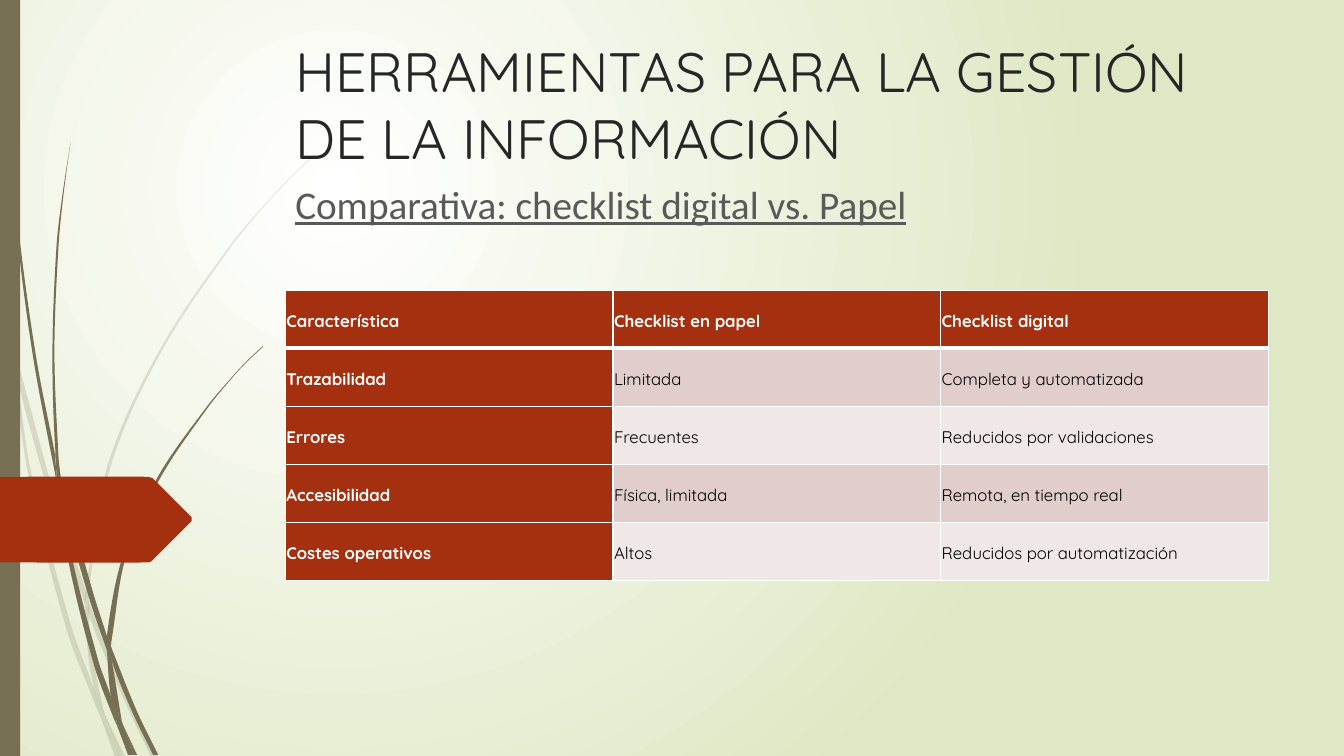
from math import hypot

from lxml import etree
from pptx import Presentation
from pptx.dml.color import RGBColor
from pptx.enum.shapes import MSO_SHAPE
from pptx.enum.text import MSO_ANCHOR, PP_ALIGN
from pptx.oxml.ns import qn
from pptx.util import Inches, Pt

RECTANGLE = MSO_SHAPE.RECTANGLE
LEFT = PP_ALIGN.LEFT
TOP, MIDDLE, BOTTOM = MSO_ANCHOR.TOP, MSO_ANCHOR.MIDDLE, MSO_ANCHOR.BOTTOM

COLORS = {name: RGBColor.from_string(value) for name, value in {
    "white": "FFFFFF", "lime": "DFE8C4", "olive": "766F54", "rust": "A53010",
    "title": "262626", "subtitle": "595959", "black": "000000",
    "band_dark": "E1CDCC", "band_light": "F0E8E7",
}.items()}

# Content column shared by the title, subtitle and table
CONTENT_LEFT, CONTENT_WIDTH = 2.83, 9.75
TITLE_TOP, TITLE_HEIGHT = 0.25, 1.49
TABLE_TOP, TABLE_HEIGHT = 2.88, 2.88

# Outline corners of the grass pieces, in inches
FAINT_GRASS = [
    [(0.11, 3.5), (0.09, 3.22), (0, 2.82), (0, 2.99), (0.1, 3.44)],
    [(0.58, 5.22), (0.84, 5.99), (0.85, 5.86), (0.62, 5.2), (0.14, 3.45), (0.17, 3.76)],
    [(0.92, 6.07), (0.88, 5.96), (0.88, 6.1), (1.23, 6.94), (1.5, 7.51), (1.55, 7.51),
     (1.27, 6.92)],
    [(1.19, 7.51), (1.24, 7.51), (1.05, 7.11)],
    [(0.93, 6.83), (0.7, 6.19), (0.31, 4.69), (0.17, 3.76), (0.11, 3.5), (0.28, 4.7),
     (0.65, 6.21), (0.92, 6.93), (1.01, 7.14), (0.99, 7.07)],
    [(0.84, 5.99), (0.87, 6.46), (0.93, 6.83), (0.96, 6.92), (1.05, 7.11), (1.03, 7.06),
     (0.91, 6.46), (0.88, 6.1), (0.88, 6.08)],
    [(0.88, 5.84), (1.1, 4.62), (1.6, 3.49), (2.29, 2.45), (2.68, 1.98), (2.9, 1.75),
     (3.12, 1.54), (3.12, 1.53), (2.89, 1.75), (2.68, 1.97), (2.28, 2.44), (1.58, 3.48),
     (1.07, 4.61), (0.85, 5.84), (0.85, 5.86), (0.88, 5.96)],
    [(1.01, 7.14), (1.14, 7.51), (1.19, 7.51)],
    [(0.88, 6.08), (0.88, 6.1), (0.88, 5.96), (0.85, 5.86), (0.84, 5.99)],
    [(0.96, 6.92), (0.93, 6.83), (0.99, 7.07), (1.01, 7.14), (1.19, 7.51), (1.05, 7.11)],
]
SOLID_GRASS = [
    [(0.07, 1.1), (0.17, 2.33), (0.33, 3.55), (0.56, 4.77), (0.57, 4.81), (0.55, 4.57),
     (0.55, 4.53), (0.36, 3.55), (0.19, 2.32), (0.08, 1.09), (0.05, 0.48), (0.04, 0),
     (0.03, 0), (0.04, 0.48)],
    [(0.88, 5.92), (1.06, 6.45), (1.06, 6.33), (1.06, 6.31), (0.93, 5.9), (0.6, 4.72),
     (0.64, 5.05)],
    [(1.13, 6.49), (1.1, 6.41), (1.11, 6.56), (1.32, 7.08), (1.52, 7.49), (1.57, 7.49),
     (1.36, 7.06)],
    [(1.1, 6.91), (0.98, 6.57), (0.72, 5.56), (0.64, 5.05), (0.57, 4.77), (0.68, 5.57),
     (0.93, 6.59), (1.11, 7.08), (1.17, 7.22), (1.16, 7.17)],
    [(0.6, 4.72), (0.58, 4.53), (0.54, 3.49), (0.58, 2.45), (0.63, 1.93), (0.7, 1.41),
     (0.62, 1.93), (0.56, 2.45), (0.52, 3.49), (0.55, 4.49)],
    [(1.33, 7.49), (1.36, 7.49), (1.22, 7.19)],
    [(0.57, 4.77), (0.64, 5.05), (0.6, 4.72), (0.55, 4.49), (0.55, 4.53)],
    [(1.11, 6.33), (1.25, 5.52), (1.58, 4.76), (2.05, 4.06), (2.31, 3.74), (2.45, 3.59),
     (2.61, 3.44), (2.6, 3.44), (2.45, 3.58), (2.31, 3.73), (2.04, 4.05), (1.56, 4.74),
     (1.22, 5.51), (1.06, 6.31), (1.1, 6.41)],
    [(1.17, 7.22), (1.27, 7.49), (1.31, 7.49)],
    [(1.06, 6.45), (1.1, 6.91), (1.16, 7.06), (1.22, 7.19), (1.21, 7.16), (1.11, 6.56),
     (1.09, 6.51)],
    [(1.06, 6.45), (1.09, 6.51), (1.11, 6.56), (1.1, 6.41), (1.06, 6.31), (1.06, 6.33)],
    [(1.16, 7.06), (1.1, 6.91), (1.16, 7.17), (1.17, 7.22), (1.3, 7.49), (1.33, 7.49),
     (1.22, 7.19)],
]
PAGE_TAG = [(1.47, 5.58), (1.5, 5.57), (1.51, 5.56), (1.9, 5.17), (1.9, 5.13),
            (1.51, 4.74), (1.5, 4.74), (1.47, 4.73), (0, 4.73), (0, 5.58)]
SMOOTH_LIMIT = 0.8  # cosine of the sharpest turn that is still rounded

TABLE_ROWS = [
    ("Característica", "Checklist en papel", "Checklist digital"),
    ("Trazabilidad", "Limitada", "Completa y automatizada"),
    ("Errores", "Frecuentes", "Reducidos por validaciones"),
    ("Accesibilidad", "Física, limitada", "Remota, en tiempo real"),
    ("Costes operativos", "Altos", "Reducidos por automatización"),
]


def paint(shape, color):
    shape.shadow.inherit = False
    shape.fill.solid()
    shape.fill.fore_color.rgb = COLORS[color]
    shape.line.fill.background()


def write(frame, text, color, font_format, paragraph_format):
    frame.word_wrap = True
    paragraph = frame.paragraphs[0]
    for name, value in paragraph_format.items():
        setattr(paragraph, name, value)
    run = paragraph.add_run()
    run.text = text
    for name, value in font_format.items():
        setattr(run.font, name, value)
    run.font.color.rgb = COLORS[color]


presentation = Presentation()
presentation.slide_width, presentation.slide_height = Inches(13.33), Inches(7.5)
slide = presentation.slides.add_slide(presentation.slide_layouts[5])
shapes = slide.shapes

# Radial background, centred in the upper left quarter
background = slide.background.fill
background.gradient()
for stop, color in zip(background.gradient_stops, ("white", "lime")):
    stop.color.rgb = COLORS[color]
linear = next(slide.element.iter(qn("a:lin")))
radial = etree.Element(qn("a:path"), {"path": "circle"})
etree.SubElement(radial, qn("a:fillToRect"),
                 {"l": "50000", "t": "50000", "r": "100000", "b": "100000"})
linear.getparent().replace(linear, radial)

# Grass and side bar, then the page tag
faint_group, solid_group = shapes.add_group_shape(), shapes.add_group_shape()
paint(shapes.add_shape(RECTANGLE, 0, 0, Inches(0.2), presentation.slide_height), "olive")
outlines = [(faint_group.shapes, piece, "olive", 20) for piece in FAINT_GRASS]
outlines += [(solid_group.shapes, piece, "olive", 100) for piece in SOLID_GRASS]
outlines.append((shapes, PAGE_TAG, "rust", 100))
for parent, corners, color, opacity in outlines:
    points = [(Inches(x), Inches(y)) for x, y in corners]
    builder = parent.build_freeform(*points[0])
    builder.add_line_segments(points[1:] + points[:1], close=True)
    shape = builder.convert_to_shape()
    paint(shape, color)
    if opacity < 100:
        fill_color = next(shape.element.iter(qn("a:srgbClr")))
        etree.SubElement(fill_color, qn("a:alpha"), val=str(opacity * 1000))

    # Bend each side along its neighbours, except at sharp corners
    origin_x, origin_y = min(x for x, y in points), min(y for x, y in points)
    nodes = [complex(x - origin_x, y - origin_y) for x, y in points]
    lines = list(shape.element.iter(qn("a:lnTo")))
    for index, line in enumerate(lines):
        before, start, end, after = (nodes[(index + k) % len(nodes)] for k in (-1, 0, 1, 2))
        side = end - start
        controls = []
        for other, chord, anchor, sign in ((start - before, end - before, start, 1),
                                           (after - end, after - start, end, -1)):
            cosine = (side * other.conjugate()).real / (abs(side) * abs(other))
            direction = chord if cosine > SMOOTH_LIMIT else side
            length = abs(side) / 3 / hypot(direction.real, direction.imag)
            controls.append(anchor + sign * direction * length)
        curve = etree.Element(qn("a:cubicBezTo"))
        for node in (*controls, end):
            etree.SubElement(curve, qn("a:pt"), x=str(round(node.real)), y=str(round(node.imag)))
        line.getparent().replace(line, curve)

# Title, in front of the decoration
title = shapes.title
title.element.getparent().append(title.element)
title.left, title.top = Inches(CONTENT_LEFT), Inches(TITLE_TOP)
title.width, title.height = Inches(CONTENT_WIDTH), Inches(TITLE_HEIGHT)
title.text_frame.vertical_anchor = BOTTOM
write(title.text_frame, "HERRAMIENTAS PARA LA GESTIÓN DE LA INFORMACIÓN", "title",
      {"name": "Quicksand", "size": Pt(39.6)}, {"alignment": LEFT})

# Subtitle
subtitle = shapes.add_textbox(Inches(CONTENT_LEFT), Inches(TITLE_TOP + TITLE_HEIGHT),
                              Inches(CONTENT_WIDTH), Inches(5.22))
subtitle.text_frame.vertical_anchor = TOP
write(subtitle.text_frame, "Comparativa: checklist digital vs. Papel", "subtitle",
      {"name": "Calibri", "size": Pt(28), "underline": True},
      {"alignment": LEFT, "space_before": Pt(10), "space_after": Pt(8)})

# Comparison table, white borders with a thick one under the header
table = shapes.add_table(len(TABLE_ROWS), len(TABLE_ROWS[0]), Inches(CONTENT_LEFT),
                         Inches(TABLE_TOP), Inches(CONTENT_WIDTH), Inches(TABLE_HEIGHT)).table
for row, texts in enumerate(TABLE_ROWS):
    for column, text in enumerate(texts):
        cell = table.cell(row, column)
        heading = row == 0 or column == 0
        band = "band_dark" if row % 2 else "band_light"
        cell.vertical_anchor = MIDDLE
        for side in ("left", "right", "top", "bottom"):
            setattr(cell, f"margin_{side}", Inches(0.01))
        cell.fill.solid()
        cell.fill.fore_color.rgb = COLORS["rust" if heading else band]
        write(cell.text_frame, text, "white" if heading else "black",
              {"name": "Quicksand", "size": Pt(12), "bold": heading},
              {"alignment": LEFT, "line_spacing": 1.15, "space_after": Pt(8)})
        properties = cell._tc.get_or_add_tcPr()
        for position, edge in enumerate(("lnL", "lnR", "lnT", "lnB")):
            thick = (row, edge) in ((0, "lnB"), (1, "lnT"))
            border = etree.Element(qn(f"a:{edge}"), w=str(Pt(3 if thick else 1)))
            border_fill = etree.SubElement(border, qn("a:solidFill"))
            etree.SubElement(border_fill, qn("a:srgbClr"), val=str(COLORS["white"]))
            properties.insert(position, border)

presentation.save("out.pptx")
